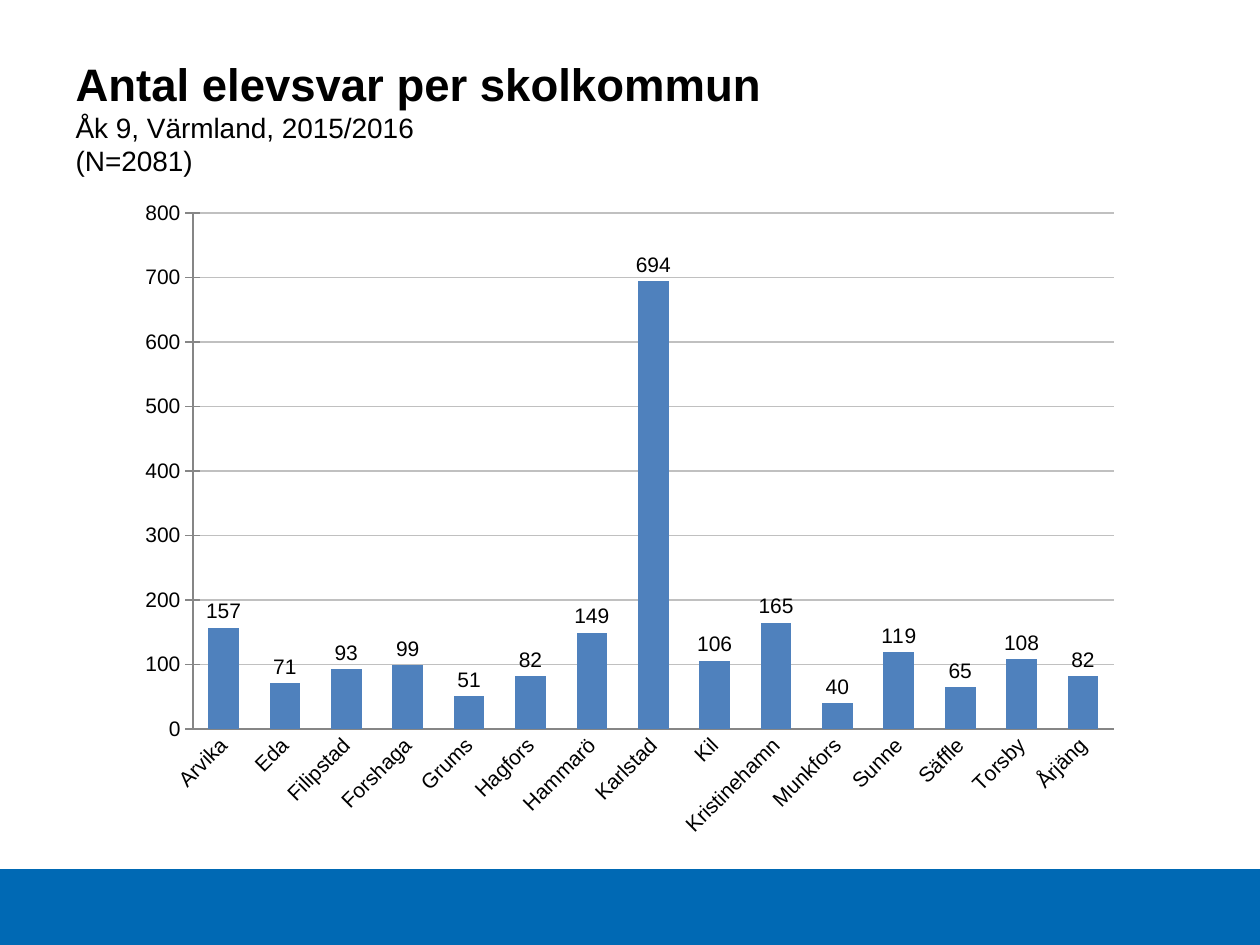
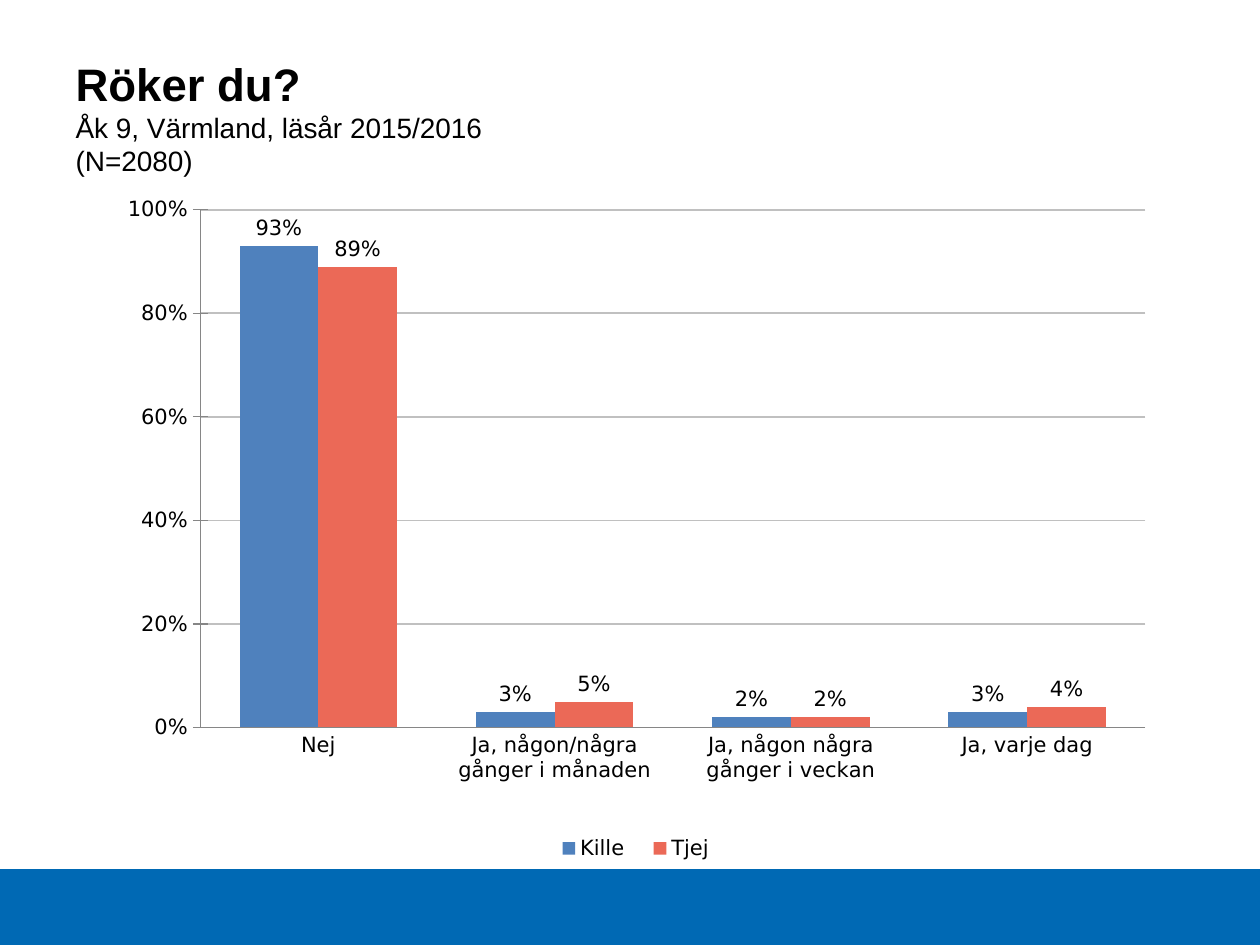
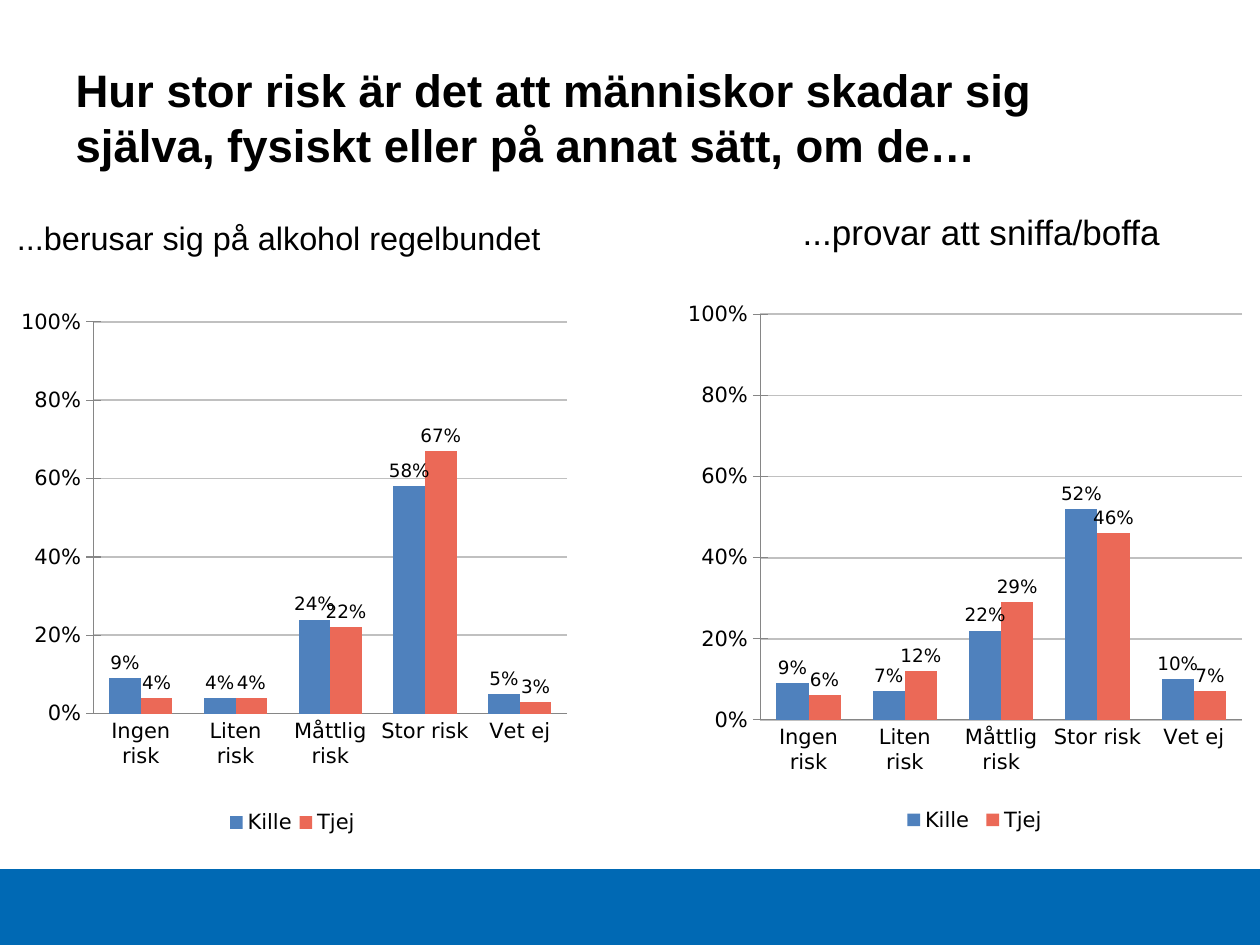
from lxml import etree
from pptx import Presentation
from pptx.chart.data import CategoryChartData
from pptx.dml.color import RGBColor
from pptx.enum.chart import XL_CHART_TYPE as ChartType
from pptx.enum.chart import XL_LABEL_POSITION as LabelPosition
from pptx.enum.chart import XL_LEGEND_POSITION as LegendPosition
from pptx.enum.chart import XL_TICK_MARK as TickMark
from pptx.enum.shapes import MSO_SHAPE as Preset
from pptx.enum.text import MSO_ANCHOR as Anchor
from pptx.enum.text import MSO_AUTO_SIZE as AutoSize
from pptx.enum.text import PP_ALIGN as Align
from pptx.oxml.ns import qn
from pptx.util import Cm, Pt

BLACK, BAND_BLUE, GRID, AXIS = "000000", "0069B4", "C0C0C0", "868686"
KILLE, TJEJ = "4F81BD", "EB6957"
TITLE_ONLY, TWO_CONTENT = 5, 3
SLIDE_SIZE = (25.4, 19.05)
BAND_BOX = (0, 17.52, 25.4, 1.53)
TITLE_BOX = (1.27, 0.76, 22, 3.18)
HEADING_WIDTH, HEADING_HEIGHT = 11.23, 1.78

HEADLINE = {"size": Pt(26), "name": "Arial", "bold": True}
SUBTITLE = {"size": Pt(16), "name": "Arial", "bold": False}
CHART_SANS = {"size": Pt(12), "name": "DejaVu Sans"}
CHART_ARIAL = {"size": Pt(12), "name": "Arial"}
TITLE_FRAME = {"auto_size": AutoSize.NONE, "word_wrap": True, "vertical_anchor": Anchor.MIDDLE}
HEADING_FRAME = {"auto_size": AutoSize.NONE, "word_wrap": True, "vertical_anchor": Anchor.TOP}
HEADING_PARAGRAPH = {"alignment": Align.CENTER, "space_before": Pt(0)}
PERCENT_SCALE = {"minimum_scale": 0, "maximum_scale": 1, "major_unit": 0.2}
COUNT_SCALE = {"minimum_scale": 0, "maximum_scale": 800, "major_unit": 100}

MUNICIPALITIES = {
    "Arvika": 157, "Eda": 71, "Filipstad": 93, "Forshaga": 99, "Grums": 51,
    "Hagfors": 82, "Hammarö": 149, "Karlstad": 694, "Kil": 106,
    "Kristinehamn": 165, "Munkfors": 40, "Sunne": 119, "Säffle": 65,
    "Torsby": 108, "Årjäng": 82,
}
SMOKING_ANSWERS = [
    "Nej", "Ja, någon/några gånger i månaden",
    "Ja, någon några gånger i veckan", "Ja, varje dag",
]
RISK_ANSWERS = ["Ingen risk", "Liten risk", "Måttlig risk", "Stor risk", "Vet ej"]


def rgb(color):
    return RGBColor.from_string(color)


def apply(target, values):
    for attribute, value in values.items():
        setattr(target, attribute, value)


def set_font(font, values):
    apply(font, values)
    font.color.rgb = rgb(BLACK)


def place(shape, box):
    apply(shape, dict(zip(("left", "top", "width", "height"), map(Cm, box))))


def set_line(line, color, width):
    line.color.rgb = rgb(color)
    line.width = Pt(width)


def add_master_band(prs, slide):
    band = slide.shapes.add_shape(Preset.RECTANGLE, *map(Cm, BAND_BOX))
    band.shadow.inherit = False
    band.fill.solid()
    band.fill.fore_color.rgb = rgb(BAND_BLUE)
    band.line.fill.background()
    band.element.nvSpPr.cNvPr.set("id", "100")
    prs.slide_master.shapes.element.insert(2, band.element)


def fill_title(slide, headline, *subtitles):
    title = slide.shapes.title
    place(title, TITLE_BOX)
    apply(title.text_frame, TITLE_FRAME)
    paragraph = title.text_frame.paragraphs[0]
    paragraph.alignment = Align.LEFT
    for index, text in enumerate((headline, *subtitles)):
        if index:
            paragraph.add_line_break()
        run = paragraph.add_run()
        run.text = text
        set_font(run.font, SUBTITLE if index else HEADLINE)


def set_layout(chart, region, position, fractions, settings=()):
    parent = chart.element.xpath(f"c:chart/c:{region}")[0]
    for old in parent.xpath("c:layout"):
        parent.remove(old)
    layout = etree.Element(qn("c:layout"))
    manual = etree.SubElement(layout, qn("c:manualLayout"))
    edges = [("xMode", "edge"), ("yMode", "edge")]
    for tag, value in [*settings, *edges, *zip("xywh", fractions)]:
        etree.SubElement(manual, qn(f"c:{tag}")).set("val", str(value))
    parent.insert(position, layout)


def add_columns(slide, box, answers, series, plot, font, scale, number_format="General",
                label_size=12, slanted=False, legend=None):
    data = CategoryChartData(number_format=number_format)
    data.categories = answers
    for name, values, _ in series:
        data.add_series(name, values)
    frame = slide.shapes.add_chart(ChartType.COLUMN_CLUSTERED, *map(Cm, box), data)
    chart = frame.chart
    chart.has_title = False
    set_font(chart.font, font)
    set_layout(chart, "plotArea", 0, plot, [("layoutTarget", "inner")])

    value_axis, answer_axis = chart.value_axis, chart.category_axis
    apply(value_axis, {**scale, "major_tick_mark": TickMark.CROSS, "has_major_gridlines": True})
    set_line(value_axis.major_gridlines.format.line, GRID, 1)
    apply(value_axis.tick_labels, {"number_format": number_format,
                                   "number_format_is_linked": False})
    answer_axis.major_tick_mark = TickMark.NONE
    for axis in (value_axis, answer_axis):
        set_font(axis.tick_labels.font, font)
        set_line(axis.format.line, AXIS, 0.75)
    if slanted:
        chart.element.xpath("c:chart/c:plotArea/c:catAx/c:txPr/a:bodyPr")[0].set("rot", "-2700000")

    columns = chart.plots[0]
    apply(columns, {"gap_width": 100, "overlap": 0, "vary_by_categories": False})
    for column, (_, _, color) in zip(columns.series, series):
        column.format.fill.solid()
        column.format.fill.fore_color.rgb = rgb(color)
        labels = column.data_labels
        apply(labels, {"show_value": True, "number_format": number_format,
                       "number_format_is_linked": False,
                       "position": LabelPosition.OUTSIDE_END})
        set_font(labels.font, {**font, "size": Pt(label_size)})

    chart.has_legend = legend is not None
    if chart.has_legend:
        apply(chart.legend, {"position": LegendPosition.BOTTOM, "include_in_layout": False})
        set_font(chart.legend.font, font)
        set_layout(chart, "legend", 1, legend)


def add_gender_columns(slide, box, answers, kille, tjej, plot, legend, label_size):
    series = [("Kille", kille, KILLE), ("Tjej", tjej, TJEJ)]
    add_columns(slide, box, answers, series, plot, CHART_SANS, PERCENT_SCALE, "0%",
                label_size, legend=legend)


def fill_heading(heading, box, text, size):
    place(heading, box)
    apply(heading.text_frame, HEADING_FRAME)
    paragraph = heading.text_frame.paragraphs[0]
    properties = paragraph._p.get_or_add_pPr()
    apply(paragraph, HEADING_PARAGRAPH)
    for key in ("marL", "indent"):
        properties.set(key, "0")
    etree.SubElement(properties, qn("a:buNone"))
    run = paragraph.add_run()
    run.text = text
    set_font(run.font, {"size": Pt(size), "name": "Arial"})


def add_risk_panel(slide, box, heading, text, size, shift, kille, tjej, plot, legend):
    left, top, width, height = box
    fill_heading(heading, (left + shift, top, HEADING_WIDTH, HEADING_HEIGHT), text, size)
    chart_box = (left, top + HEADING_HEIGHT, width, height - HEADING_HEIGHT)
    add_gender_columns(slide, chart_box, RISK_ANSWERS, kille, tjej, plot, legend, 10.5)


def build_responses(slide):
    fill_title(slide, "Antal elevsvar per skolkommun", "Åk 9, Värmland, 2015/2016", "(N=2081)")
    add_columns(slide, (2.46, 3.76, 20.4, 13.34), list(MUNICIPALITIES),
                [("Series 1", list(MUNICIPALITIES.values()), KILLE)],
                (0.07, 0.04, 0.91, 0.78), CHART_ARIAL, COUNT_SCALE, slanted=True)


def build_smoking(slide):
    fill_title(slide, "Röker du?", "Åk 9, Värmland, läsår 2015/2016", "(N=2080)")
    add_gender_columns(slide, (2.11, 3.81, 21.41, 13.92), SMOKING_ANSWERS,
                       (0.93, 0.03, 0.02, 0.03), (0.89, 0.05, 0.02, 0.04),
                       (0.09, 0.03, 0.89, 0.75), (0.41, 0.93, 0.18, 0.05), 12)


def build_risk(slide):
    fill_title(slide, "Hur stor risk är det att människor skadar sig själva, "
                      "fysiskt eller på annat sätt, om de…")
    alcohol, sniffing = slide.placeholders[1], slide.placeholders[2]
    add_risk_panel(slide, (0, 4.27, 11.79, 12.75), alcohol,
                   "...berusar sig på alkohol regelbundet", 18.5, 0,
                   (0.09, 0.04, 0.24, 0.58, 0.05), (0.04, 0.04, 0.22, 0.67, 0.03),
                   (0.16, 0.04, 0.81, 0.72), (0.38, 0.93, 0.24, 0.06))
    add_risk_panel(slide, (13.41, 4.11, 11.99, 12.98), sniffing,
                   "...provar att sniffa/boffa", 20, 0.76,
                   (0.09, 0.07, 0.22, 0.52, 0.1), (0.06, 0.12, 0.29, 0.46, 0.07),
                   (0.16, 0.04, 0.81, 0.73), (0.39, 0.92, 0.26, 0.06))


def main():
    prs = Presentation()
    apply(prs, dict(zip(("slide_width", "slide_height"), map(Cm, SLIDE_SIZE))))
    pages = [(build_responses, TITLE_ONLY), (build_smoking, TITLE_ONLY), (build_risk, TWO_CONTENT)]
    for build, layout in pages:
        build(prs.slides.add_slide(prs.slide_layouts[layout]))
    add_master_band(prs, prs.slides[0])
    prs.save("out.pptx")


if __name__ == "__main__":
    main()
